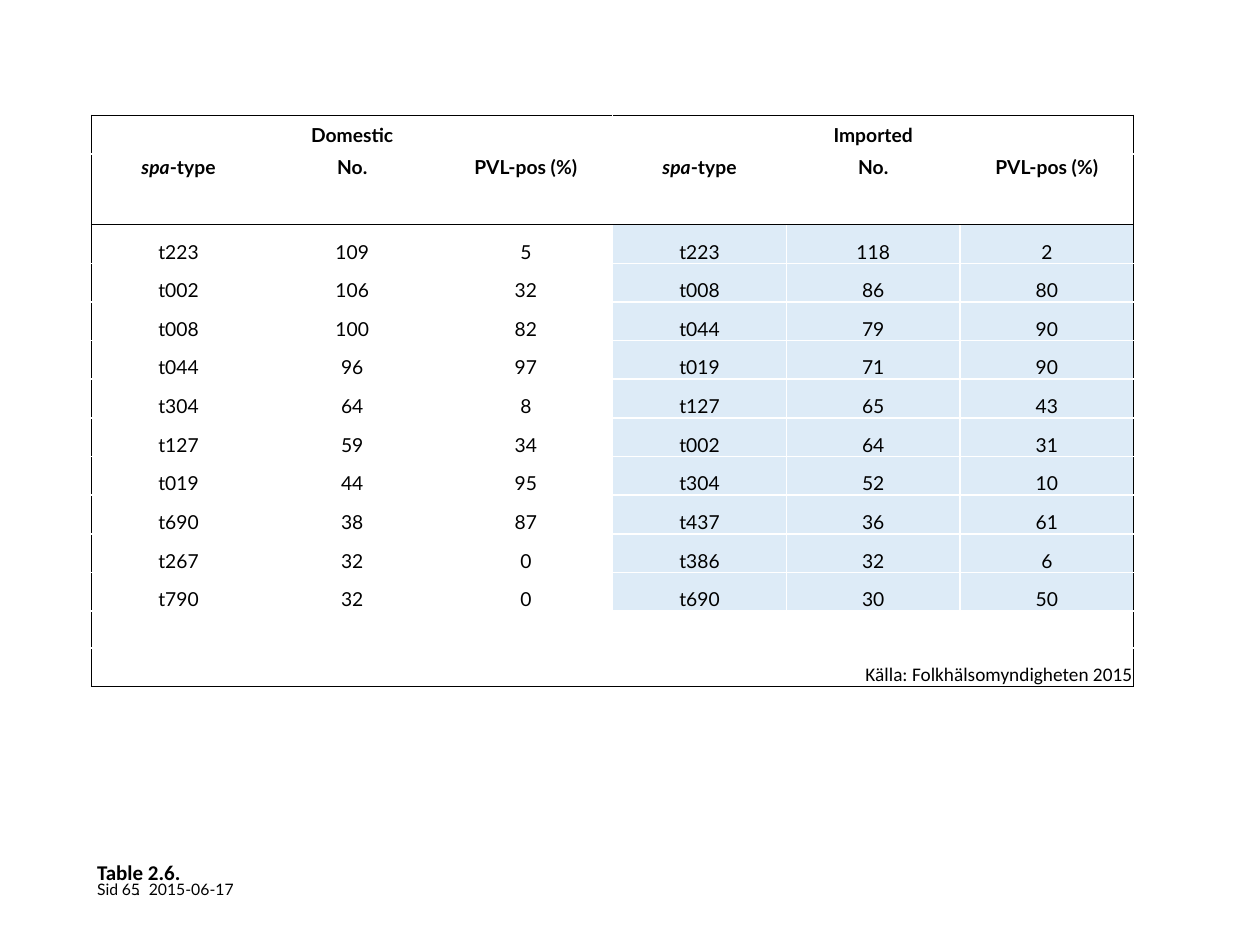
from pptx import Presentation
from pptx.dml.color import RGBColor
from pptx.enum.text import MSO_ANCHOR, MSO_AUTO_SIZE, PP_ALIGN
from pptx.oxml.ns import qn
from pptx.util import Pt
from lxml.etree import SubElement

HUES = {"ink": "000000", "white": "FFFFFF", "tint": "DDEBF7"}
HEADS = ["spa-type", "No.", "PVL-pos (%)"] * 2
DATA = [
    ("t223", 109, 5, "t223", 118, 2),
    ("t002", 106, 32, "t008", 86, 80),
    ("t008", 100, 82, "t044", 79, 90),
    ("t044", 96, 97, "t019", 71, 90),
    ("t304", 64, 8, "t127", 65, 43),
    ("t127", 59, 34, "t002", 64, 31),
    ("t019", 44, 95, "t304", 52, 10),
    ("t690", 38, 87, "t437", 36, 61),
    ("t267", 32, 0, "t386", 32, 6),
    ("t790", 32, 0, "t690", 30, 50),
]
SOURCE = "Källa: Folkhälsomyndigheten 2015"
ROWS = [22.1, 40.3] + [22.1] * len(DATA) + [21, 22.1]
LAST = len(ROWS) - 1
COLS = len(HEADS)
HALF = COLS // 2


def hue(name):
    return RGBColor.from_string(HUES[name])


def style(item, **values):
    for name, value in values.items():
        setattr(item, name, value)


def write(para, text, size=11, face="Lato", bold=False, align=PP_ALIGN.CENTER):
    """Add text to a paragraph, with the species gene name 'spa' in italics."""
    para.alignment = align
    parts = ["spa", text[3:]] if text.startswith("spa-") else [text]
    for part in parts:
        run = para.add_run()
        run.text = part
        style(run.font, size=Pt(size), name=face, bold=bold, italic=part == "spa")
        run.font.color.rgb = hue("ink")


def edge(cell, row, col, span):
    """Draw white cell borders, with black ones round the table and under the heads."""
    rules = {
        "L": (col == 0, 1),
        "R": (col + span == COLS, 1),
        "T": (row in (0, 2), 0.5 if row == 2 else 1),
        "B": (row in (1, LAST), 0.5 if row == 1 else 1),
    }
    props = cell._tc.get_or_add_tcPr()
    for side, (dark, width) in rules.items():
        line = SubElement(props, qn(f"a:ln{side}"), w=str(Pt(width)))
        fill = SubElement(line, qn("a:solidFill"))
        SubElement(fill, qn("a:srgbClr"), val=HUES["ink" if dark else "white"])


def fill_cell(cell, row, col, text, span):
    """Format one cell and write its text."""
    anchor = {0: MSO_ANCHOR.MIDDLE, 1: MSO_ANCHOR.TOP}.get(row, MSO_ANCHOR.BOTTOM)
    style(cell, margin_left=Pt(0.72), margin_right=Pt(0.72), margin_top=Pt(0.72),
          margin_bottom=0, vertical_anchor=anchor)
    edge(cell, row, col, span)
    if 2 <= row < LAST - 1 and col >= HALF:
        cell.fill.solid()
        cell.fill.fore_color.rgb = hue("tint")
    else:
        cell.fill.background()
    para = cell.text_frame.paragraphs[0]
    if not text:
        para.font.size = Pt(11)
    elif row == LAST:
        write(para, text, face="Calibri", align=PP_ALIGN.RIGHT)
    else:
        write(para, text, bold=row < 2)


def add_grid(slide, left, top, width):
    """Place the table of domestic and imported spa-types."""
    grid = slide.shapes.add_table(
        len(ROWS), COLS, Pt(left), Pt(top), Pt(width), Pt(sum(ROWS))).table
    style(grid, first_row=False, horz_banding=False)
    for col in grid.columns:
        col.width = Pt(width / COLS)
    for row, high in zip(grid.rows, ROWS):
        row.height = Pt(high)
    for row, col in [(0, 0), (0, HALF), (LAST, HALF)]:
        grid.cell(row, col).merge(grid.cell(row, col + HALF - 1))
    blank = [""] * COLS
    texts = [["Domestic", "", "", "Imported", "", ""], HEADS, *DATA,
             blank, ["", "", "", SOURCE, "", ""]]
    for r, line in enumerate(texts):
        for c, text in enumerate(line):
            cell = grid.cell(r, c)
            span = cell.span_width if cell.is_merge_origin else 1
            fill_cell(cell, r, c, str(text), span)


def add_note(slide, box, text, inset=(0, 0), wrap=True,
             anchor=MSO_ANCHOR.TOP, align=PP_ALIGN.LEFT):
    frame = slide.shapes.add_textbox(*map(Pt, box)).text_frame
    side, end = map(Pt, inset)
    style(frame, word_wrap=wrap, vertical_anchor=anchor, margin_left=side,
          margin_right=side, margin_top=end, margin_bottom=end)
    write(frame.paragraphs[0], text, size=9, align=align)


def add_footer(slide, left, top):
    """Place the page number and date."""
    low = MSO_ANCHOR.BOTTOM
    add_note(slide, (left + 18, top, 11.5, 18), ".", inset=(7.2, 3.6), wrap=False)
    add_note(slide, (left, top + 3.6, 12.2, 10.8), "Sid", wrap=False)
    add_note(slide, (left + 0.7, top, 23.8, 14.4), "65", anchor=low,
             align=PP_ALIGN.RIGHT)
    add_note(slide, (left + 29.5, top, 62, 14.4), "2015-06-17", anchor=low)


def add_title(slide, left, top, width, height):
    title = slide.shapes.title
    style(title, left=Pt(left), top=Pt(top), width=Pt(width), height=Pt(height))
    frame = title.text_frame
    style(frame, margin_left=0, margin_right=0, margin_top=0, margin_bottom=0,
          word_wrap=True, auto_size=MSO_AUTO_SIZE.NONE,
          vertical_anchor=MSO_ANCHOR.BOTTOM)
    para = frame.paragraphs[0]
    para.line_spacing = Pt(34)
    write(para, "Table 2.6.", size=12, face="Calibri", bold=True,
          align=PP_ALIGN.LEFT)


def main():
    deck = Presentation()
    style(deck, slide_width=Pt(720), slide_height=Pt(540))
    slide = deck.slides.add_slide(deck.slide_layouts[5])
    add_footer(slide, 55.5, 499)
    add_title(slide, 55.5, 473, 230.4, 32.4)
    add_grid(slide, 52.4, 66, 595.5)
    deck.save("out.pptx")


if __name__ == "__main__":
    main()
